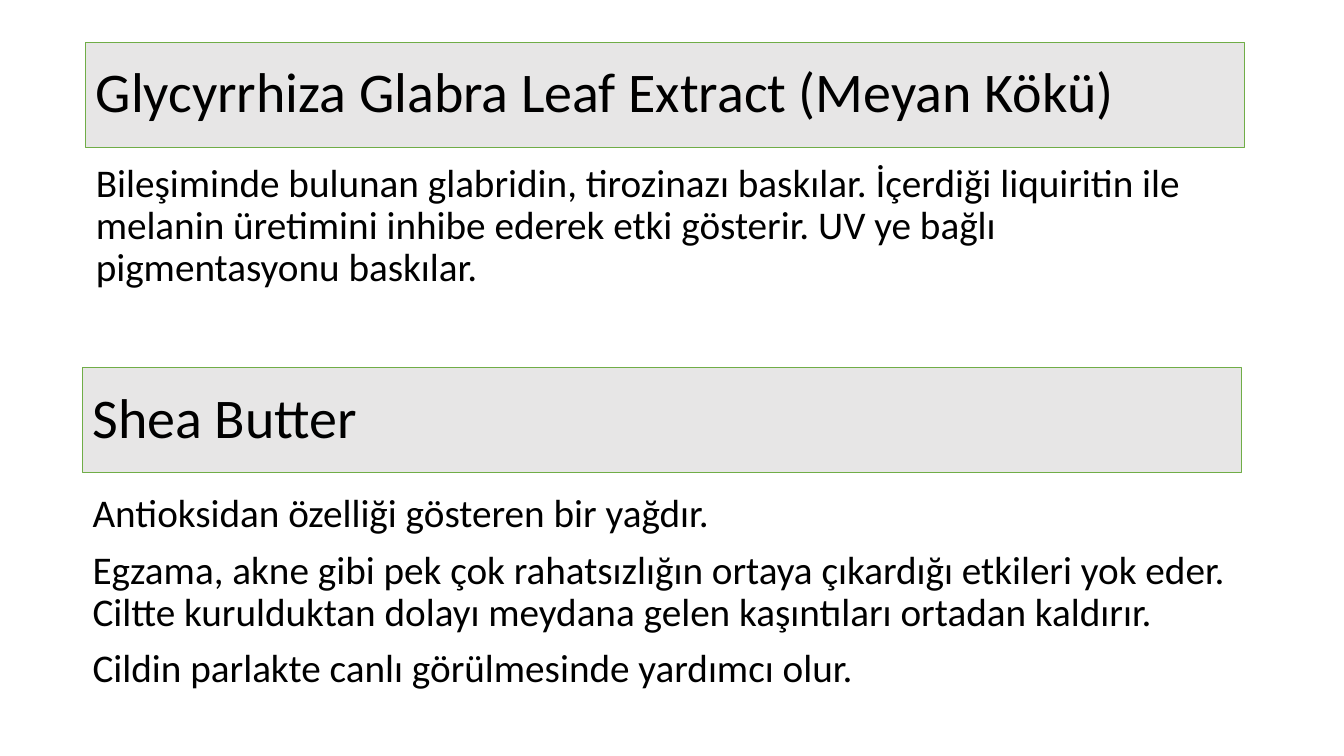
from lxml.etree import SubElement
from pptx import Presentation
from pptx.dml.color import RGBColor
from pptx.enum.shapes import MSO_SHAPE
from pptx.enum.text import MSO_ANCHOR, MSO_AUTO_SIZE, PP_ALIGN
from pptx.oxml.ns import qn
from pptx.util import Cm, Pt

GREY = RGBColor(0xE7, 0xE6, 0xE6)
GREEN = RGBColor(0x70, 0xAD, 0x47)
BLACK = RGBColor(0, 0, 0)
WIDTH = Cm(29.21)
UPPER, LOWER = Cm(2.16), Cm(2.08)

LICORICE = [
    ["Bileşiminde bulunan glabridin, tirozinazı baskılar. İçerdiği liquiritin ile "
     "melanin üretimini inhibe ederek etki gösterir. UV ye bağlı "
     "pigmentasyonu baskılar."],
]
SHEA = [
    ["Antioksidan özelliği gösteren bir yağdır."],
    ["Egzama, akne gibi pek çok rahatsızlığın ortaya çıkardığı etkileri yok eder.",
     "Ciltte kurulduktan dolayı meydana gelen kaşıntıları ortadan kaldırır."],
    ["Cildin parlakte canlı görülmesinde yardımcı olur."],
]


def place(shape, left, top, height):
    """Move a shape and give it the common width."""
    shape.left, shape.top, shape.width, shape.height = left, top, WIDTH, height


def write(shape, paras, size, gap, anchor):
    """Fill a shape with paragraphs, each a list of lines."""
    frame = shape.text_frame
    frame.word_wrap = True
    frame.auto_size = MSO_AUTO_SIZE.NONE
    frame.vertical_anchor = anchor
    for i, lines in enumerate(paras):
        para = frame.add_paragraph() if i else frame.paragraphs[0]
        para.alignment = PP_ALIGN.LEFT
        para.line_spacing = 0.9
        para.space_before = Pt(gap)
        props = para._p.get_or_add_pPr()
        props.set("marL", "0")
        props.set("indent", "0")
        SubElement(props, qn("a:buNone"))
        for j, line in enumerate(lines):
            if j:
                para.add_line_break()
            run = para.add_run()
            run.text = line
            run.font.name = "Calibri"
            run.font.size = Pt(size)
            run.font.color.rgb = BLACK


def banner(shape, text, left, top):
    """Format a shape as a grey heading with a green edge."""
    place(shape, left, top, Cm(2.64))
    shape.fill.solid()
    shape.fill.fore_color.rgb = GREY
    shape.line.color.rgb = GREEN
    shape.line.width = Pt(0.5)
    write(shape, [[text]], 40, 0, MSO_ANCHOR.MIDDLE)


def body(shape, paras, left, top, height):
    """Format a placeholder as plain text without bullets."""
    place(shape, left, top, height)
    write(shape, paras, 28, 10, MSO_ANCHOR.TOP)


def main():
    """Build the slide and save it."""
    deck = Presentation()
    deck.slide_width, deck.slide_height = Cm(33.87), Cm(19.05)
    slide = deck.slides.add_slide(deck.slide_layouts[3])
    holders = slide.placeholders
    banner(slide.shapes.title, "Glycyrrhiza Glabra Leaf Extract (Meyan Kökü)", UPPER, Cm(1.07))
    body(holders[1], LICORICE, UPPER, Cm(3.99), Cm(4.22))
    box = slide.shapes.add_shape(MSO_SHAPE.RECTANGLE, LOWER, 0, WIDTH, 0)
    box.shadow.inherit = False
    banner(box, "Shea Butter", LOWER, Cm(9.27))
    body(holders[2], SHEA, LOWER, Cm(12.32), Cm(5.49))
    deck.save("out.pptx")


if __name__ == "__main__":
    main()
